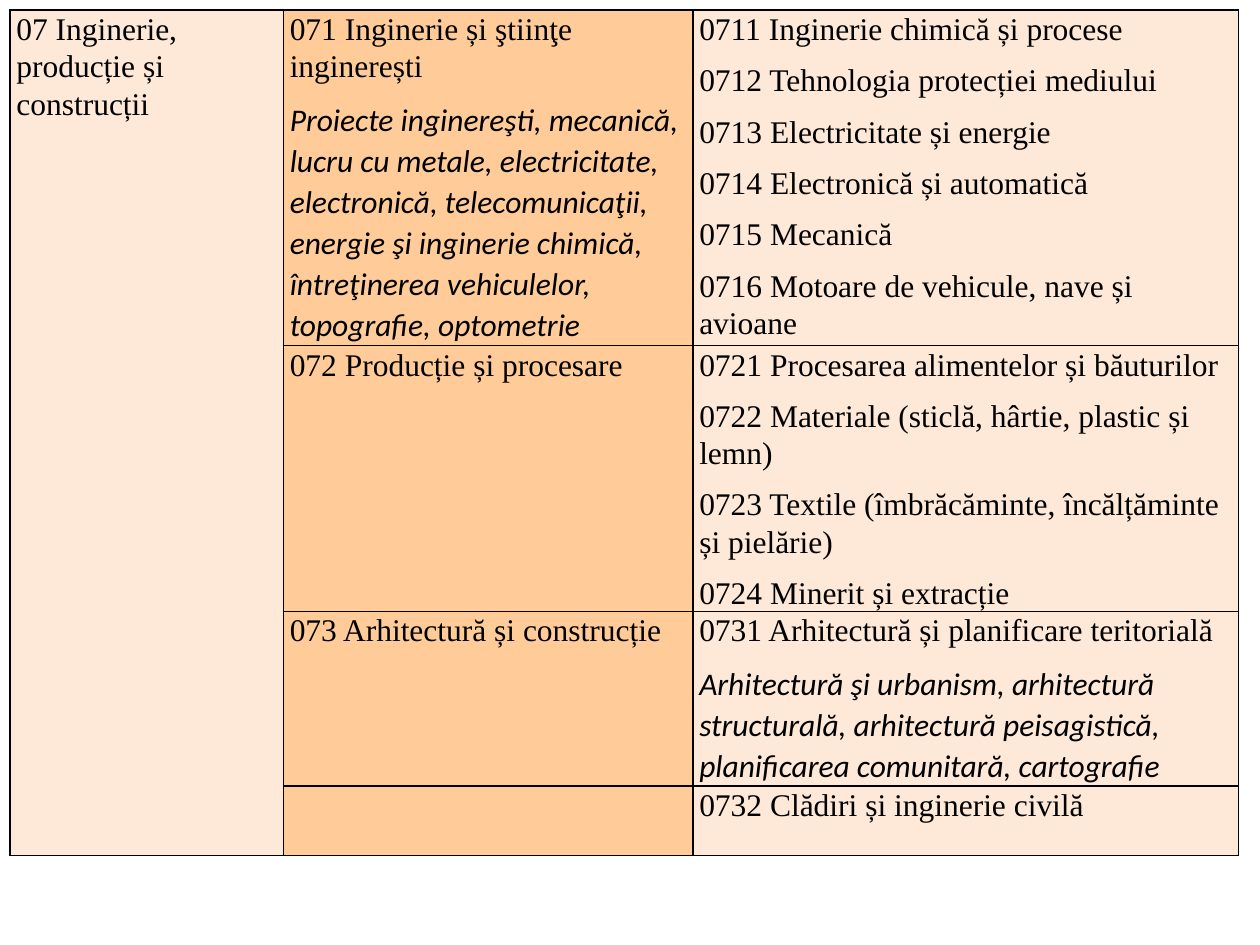
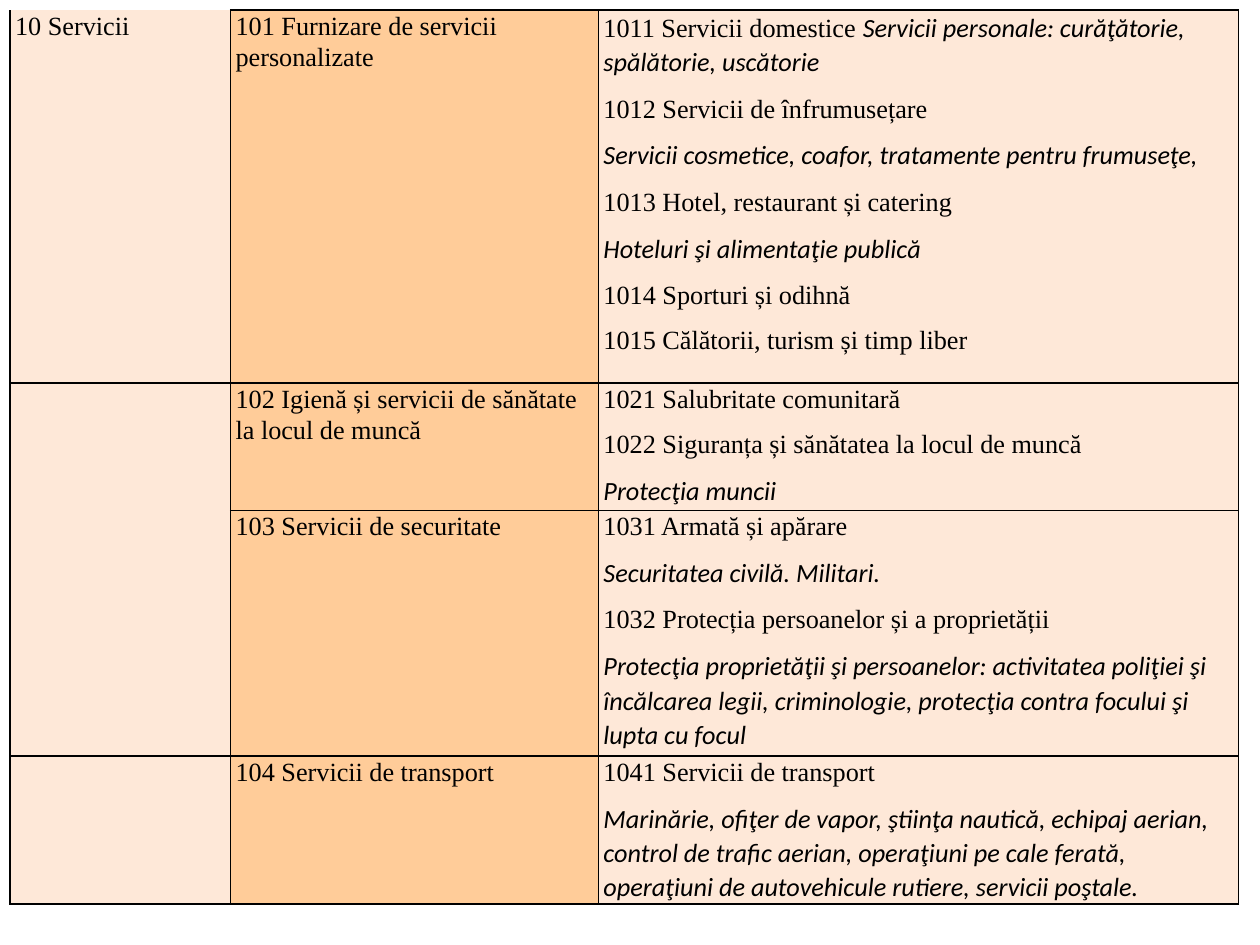
from lxml.etree import SubElement
from pptx import Presentation
from pptx.dml.color import RGBColor as RGB
from pptx.oxml.ns import qn
from pptx.util import Inches, Pt

COLORS = {"light": "FEE8D8", "orange": "FFCC99", "black": "000000"}
COLUMN_FILLS = ["light", "orange", "light"]
MARGIN = 0.08

# Each cell lists its paragraphs; "|" parts the runs of a paragraph.
# A run that opens with a code number is upright, any other is an italic note.
# "edges" names the sides drawn on the first column's cells, row by row.
engineering = {
    "size": 18, "inset": 0.05,
    "cols": [2.17, 3.25, 4.33], "rows": [2.42, 2.05, 1.36, 0.55],
    "edges": ["LRT", "LR", "LRB", "LRB"], "merge": (2, 3),
    "cells": [
        [["07 Inginerie, producție și construcții"],
         ["071 Inginerie și ştiinţe inginerești",
          "Proiecte inginereşti, mecanică, lucru cu metale, electricitate, electronică, "
          "telecomunicaţii, energie şi inginerie chimică, întreţinerea vehiculelor, "
          "topografie, optometrie"],
         ["0711 Inginerie chimică și procese",
          "0712 Tehnologia protecției mediului",
          "0713 Electricitate și energie",
          "0714 Electronică și automatică",
          "0715 Mecanică",
          "0716 Motoare de vehicule, nave și avioane"]],
        [[],
         ["072 Producție și procesare"],
         ["0721 Procesarea alimentelor și băuturilor",
          "0722 Materiale (sticlă, hârtie, plastic și lemn)",
          "0723 Textile (îmbrăcăminte, încălțăminte și pielărie)",
          "0724 Minerit și extracție"]],
        [[],
         ["073 Arhitectură și construcție"],
         ["0731 Arhitectură și planificare teritorială",
          "Arhitectură şi urbanism, arhitectură structurală, arhitectură peisagistică, "
          "planificarea comunitară, cartografie"]],
        [[], [], ["0732 Clădiri și inginerie civilă"]],
    ],
}

services = {
    "size": 15, "inset": 0.04,
    "cols": [1.75, 2.92, 5.08], "rows": [2.96, 1.01, 1.95, 1.12],
    "edges": ["LRB", "LRT", "LRB", "LRTB"], "merge": None,
    "cells": [
        [["10 Servicii"],
         ["101 Furnizare de servicii personalizate"],
         ["1011 Servicii domestice |Servicii personale: curăţătorie, spălătorie, uscătorie",
          "1012 Servicii de înfrumusețare",
          "Servicii cosmetice, coafor, tratamente pentru frumuseţe,",
          "1013 Hotel, restaurant și catering",
          "Hoteluri şi alimentaţie publică",
          "1014 Sporturi și odihnă",
          "1015 Călătorii, turism și timp liber"]],
        [[],
         ["102 Igienă și servicii de sănătate la locul de muncă"],
         ["1021 Salubritate comunitară",
          "1022 Siguranța și sănătatea la locul de muncă",
          "Protecţia muncii"]],
        [[],
         ["103 Servicii de securitate"],
         ["1031 Armată și apărare",
          "Securitatea civilă. Militari.",
          "1032 Protecția persoanelor și a proprietății",
          "Protecţia proprietăţii şi persoanelor: activitatea poliţiei şi încălcarea legii, "
          "criminologie, protecţia contra focului şi lupta cu focul"]],
        [[],
         ["104 Servicii de transport"],
         ["1041 Servicii de transport",
          "Marinărie, ofiţer de vapor, ştiinţa nautică, echipaj aerian, control de trafic "
          "aerian, operaţiuni pe cale ferată, operaţiuni de autovehicule rutiere, "
          "servicii poştale."]],
    ],
}


def set_borders(cell, sides):
    """Draw 1 pt lines on the given sides; must run before the cell is filled."""
    tcPr = cell._tc.get_or_add_tcPr()
    for side in "LRTB":
        ln = SubElement(tcPr, qn(f"a:ln{side}"), w=str(Pt(1)))
        if side in sides:
            fill = SubElement(ln, qn("a:solidFill"))
            SubElement(fill, qn("a:srgbClr"), val=COLORS["black"])
        else:
            SubElement(ln, qn("a:noFill"))


def write_paragraphs(cell, paragraphs, size):
    tf = cell.text_frame
    for i, text in enumerate(paragraphs):
        p = tf.add_paragraph() if i else tf.paragraphs[0]
        p.line_spacing = 1.07
        p.space_after = Pt(8)
        for part in text.split("|"):
            r = p.add_run()
            r.text = part
            is_code = part[0].isdigit()
            r.font.name = "Times New Roman" if is_code else "Calibri"
            r.font.italic = not is_code
            r.font.size = Pt(size)
            r.font.color.rgb = RGB.from_string(COLORS["black"])


prs = Presentation()
prs.slide_width, prs.slide_height = Inches(10), Inches(7.5)

for field in (engineering, services):
    s = prs.slides.add_slide(prs.slide_layouts[6])
    cols, rows = field["cols"], field["rows"]
    table = s.shapes.add_table(len(rows), len(cols), Inches(MARGIN), Inches(MARGIN),
                               Inches(sum(cols)), Inches(sum(rows))).table
    table.first_row = table.horz_banding = False

    # Grid
    for column, width in zip(table.columns, cols):
        column.width = Inches(width)
    for row, height in zip(table.rows, rows):
        row.height = Inches(height)

    # Cells
    for i, row_cells in enumerate(field["cells"]):
        for j, paragraphs in enumerate(row_cells):
            cell = table.cell(i, j)
            set_borders(cell, "LRTB" if j else field["edges"][i])
            cell.fill.solid()
            cell.fill.fore_color.rgb = RGB.from_string(COLORS[COLUMN_FILLS[j]])
            cell.margin_left = cell.margin_right = Inches(field["inset"])
            cell.margin_top = cell.margin_bottom = 0
            write_paragraphs(cell, paragraphs, field["size"])

    # Joined cells of the first column
    if field["merge"]:
        first, last = field["merge"]
        table.cell(first, 0).merge(table.cell(last, 0))

prs.save("out.pptx")
